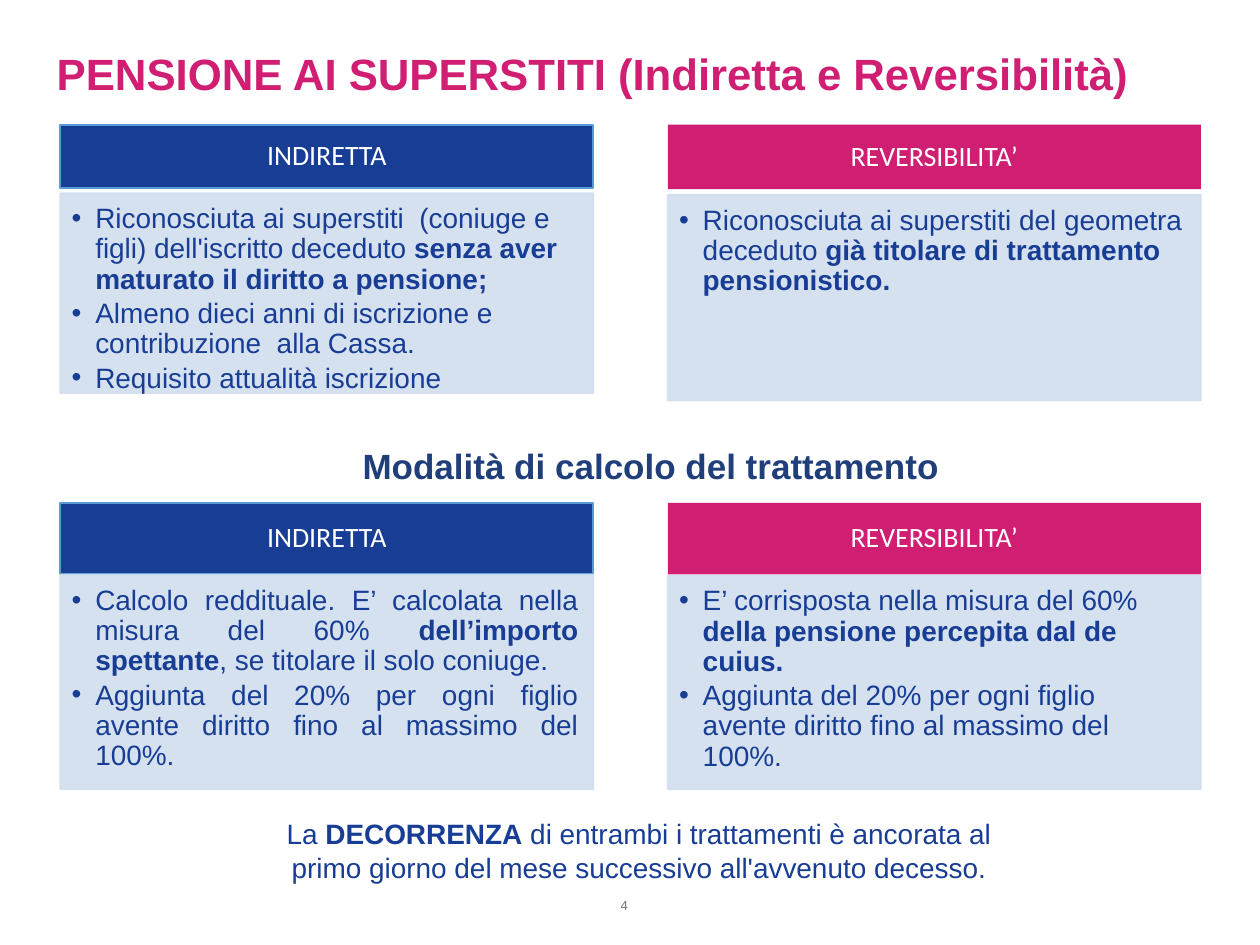
from dataclasses import dataclass

from lxml import etree
from pptx import Presentation
from pptx.dml.color import RGBColor
from pptx.enum import shapes, text
from pptx.oxml import ns
from pptx.util import Pt

BLUE, PINK, PALE = "183D95", "D01F73", "D2DEEF"
WHITE, NAVY, GREY, EDGE = "FFFFFF", "203F7A", "76777A", "5B9BD5"
LEFT, RIGHT, WIDTH = 34.5, 381.6, 304.6
CENTER, JUSTIFY = text.PP_ALIGN.CENTER, text.PP_ALIGN.JUSTIFY
START = text.PP_ALIGN.LEFT
TOP, MIDDLE = text.MSO_ANCHOR.TOP, text.MSO_ANCHOR.MIDDLE

Run = tuple[str, bool]
Paragraph = list[Run]


@dataclass
class Panel:
    heading: str
    color: str
    left: float
    top: float
    head_height: float
    body_top: float
    body_height: float
    items: list[Paragraph]
    edge: str | None = None
    align: text.PP_ALIGN = START


PANELS = [
    Panel("INDIRETTA", BLUE, LEFT, 71.3, 36.2, 110.4, 114.3, [
        [("Riconosciuta ai superstiti  (coniuge e figli) dell'iscritto deceduto ", False),
         ("senza aver maturato il diritto a pensione;", True)],
        [("Almeno dieci anni di iscrizione e contribuzione  alla Cassa.", False)],
        [("Requisito attualità iscrizione", False)],
    ], edge=EDGE),
    Panel("REVERSIBILITA’", PINK, RIGHT, 71.3, 36.9, 111.3, 117.7, [
        [("Riconosciuta ai superstiti del geometra deceduto ", False),
         ("già titolare di trattamento pensionistico.", True)],
    ]),
    Panel("INDIRETTA", BLUE, LEFT, 287.4, 40.8, 328.4, 122.6, [
        [("Calcolo reddituale. E’ calcolata nella misura del 60% ", False),
         ("dell’importo spettante", True),
         (", se titolare il solo coniuge.", False)],
        [("Aggiunta del 20% per ogni figlio avente diritto fino al massimo del 100%.", False)],
    ], edge=EDGE, align=JUSTIFY),
    Panel("REVERSIBILITA’", PINK, RIGHT, 287.4, 40.8, 328.8, 122.2, [
        [("E’ corrisposta nella misura del 60% ", False),
         ("della pensione percepita dal de cuius.", True)],
        [("Aggiunta del 20% per ogni figlio avente diritto fino al massimo del 100%.", False)],
    ]),
]


def rgb(color: str) -> RGBColor:
    return RGBColor.from_string(color)


def add_bullet(paragraph) -> None:
    properties = paragraph._p.get_or_add_pPr()
    properties.set("marL", str(Pt(13.5)))
    properties.set("indent", str(Pt(-13.5)))
    etree.SubElement(properties, ns.qn("a:buFont")).set("typeface", "Arial")
    etree.SubElement(properties, ns.qn("a:buChar")).set("char", "•")


def write(shape, paragraphs: list[Paragraph], *, size: float = 16, color: str = BLUE,
          font: str = "Arial", align=CENTER, anchor=TOP, insets=(7.2, 3.6, 7.2, 3.6),
          line_spacing=None, space_after: float = 0, bullets: bool = False) -> None:
    frame = shape.text_frame
    frame.word_wrap = True
    frame.auto_size = text.MSO_AUTO_SIZE.NONE
    frame.vertical_anchor = anchor
    (frame.margin_left, frame.margin_top,
     frame.margin_right, frame.margin_bottom) = map(Pt, insets)
    for index, runs in enumerate(paragraphs):
        paragraph = frame.add_paragraph() if index else frame.paragraphs[0]
        paragraph.alignment = align
        paragraph.space_before = Pt(0)
        paragraph.space_after = Pt(space_after)
        if line_spacing:
            paragraph.line_spacing = line_spacing
        if bullets:
            add_bullet(paragraph)
        for wording, bold in runs:
            run = paragraph.add_run()
            run.text = wording
            run.font.name = font
            run.font.size = Pt(size)
            run.font.bold = bold
            run.font.color.rgb = rgb(color)


def add_box(slide, left: float, top: float, height: float, fill: str,
            edge: str | None = None, alpha: int = 100):
    box = slide.shapes.add_shape(shapes.MSO_SHAPE.RECTANGLE,
                                 Pt(left), Pt(top), Pt(WIDTH), Pt(height))
    box.shadow.inherit = False
    box.fill.solid()
    box.fill.fore_color.rgb = rgb(fill)
    if edge:
        box.line.color.rgb = rgb(edge)
        box.line.width = Pt(1)
    else:
        box.line.fill.background()
    if alpha < 100:
        for tint in box._element.spPr.iter(ns.qn("a:srgbClr")):
            etree.SubElement(tint, ns.qn("a:alpha")).set("val", str(alpha * 1000))
    return box


def add_panel(slide, panel: Panel) -> None:
    header = add_box(slide, panel.left, panel.top, panel.head_height, panel.color, panel.edge)
    write(header, [[(panel.heading, False)]], color=WHITE, font="Calibri", anchor=MIDDLE,
          insets=(8.6, 5, 8.6, 5), line_spacing=0.9)
    body = add_box(slide, panel.left, panel.body_top, panel.body_height, PALE, PALE, alpha=90)
    write(body, panel.items, align=panel.align, insets=(6.5, 6.5, 8.6, 10),
          line_spacing=0.9, space_after=2.4, bullets=True)


def add_label(slide, left: float, top: float, width: float, height: float,
              runs: Paragraph, **style) -> None:
    label = slide.shapes.add_textbox(Pt(left), Pt(top), Pt(width), Pt(height))
    write(label, [runs], **style)


def main() -> None:
    deck = Presentation()
    deck.slide_width, deck.slide_height = Pt(720), Pt(540)
    slide = deck.slides.add_slide(deck.slide_layouts[5])

    title = slide.shapes.title
    title.left, title.top, title.width, title.height = Pt(32.4), Pt(26.6), Pt(664.6), Pt(41)
    write(title, [[("PENSIONE AI SUPERSTITI (Indiretta e Reversibilità)", True)]],
          size=25, color=PINK, align=START, insets=(0, 0, 0, 0), line_spacing=Pt(30))

    for panel in PANELS:
        add_panel(slide, panel)

    add_label(slide, 201.6, 253.8, 347.8, 22.3, [("Modalità di calcolo del trattamento", True)],
              size=20, color=NAVY, insets=(0, 0, 7.2, 3.6))
    add_label(slide, 135.4, 463, 459.4, 46, [
        ("La ", False), ("DECORRENZA", True),
        (" di entrambi i trattamenti è ancorata al primo giorno del mese "
         "successivo all'avvenuto decesso.", False)])
    add_label(slide, 321.8, 504.7, 77, 28.8, [("4", False)],
              size=7.5, color=GREY, anchor=MIDDLE, insets=(0, 0, 7.2, 3.6))

    deck.save("out.pptx")


if __name__ == "__main__":
    main()
